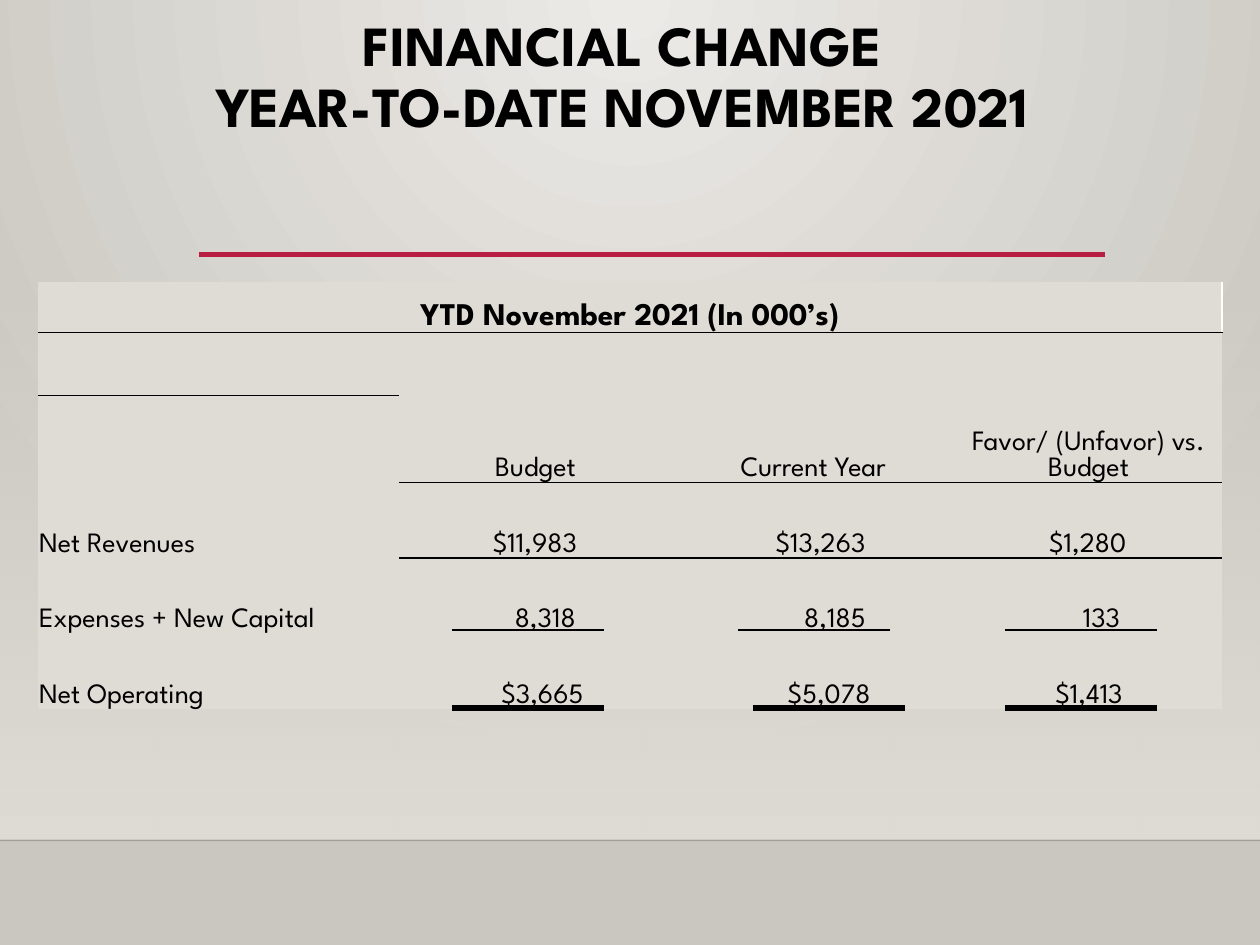
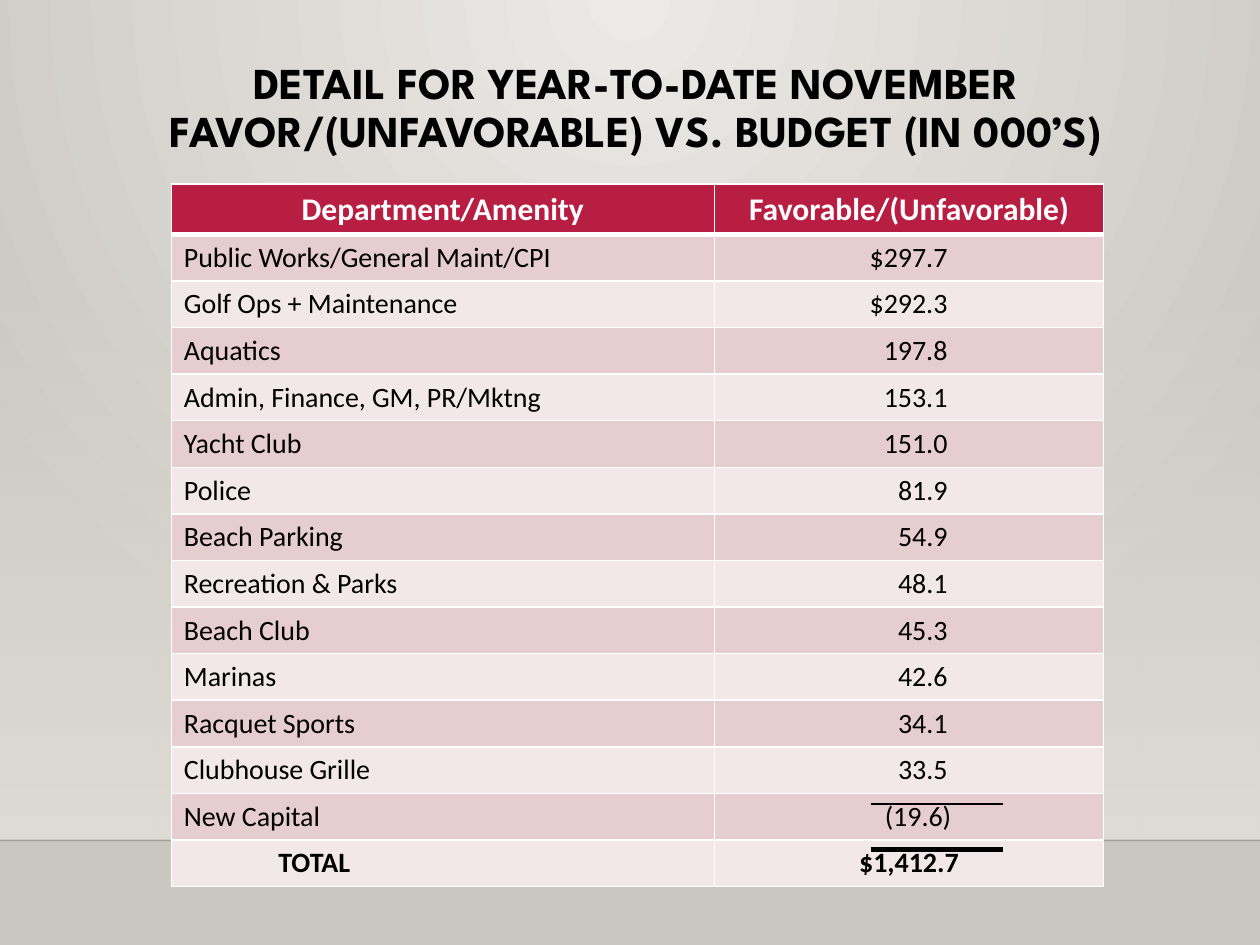
from dataclasses import dataclass

from lxml.etree import SubElement
from pptx import Presentation
from pptx.dml.color import RGBColor
from pptx.enum.shapes import MSO_CONNECTOR, MSO_SHAPE
from pptx.enum.text import MSO_ANCHOR as ANCHOR, PP_ALIGN as ALIGN
from pptx.oxml.ns import qn
from pptx.util import Inches, Pt


@dataclass(frozen=True)
class Theme:
    ink: str = "000000"
    white: str = "FFFFFF"
    accent: str = "B71E42"
    panel: str = "DFDBD5"
    glow: str = "ECEAE7"
    edge: str = "CAC7C1"
    band_dark: str = "E6CDCF"
    band_light: str = "F3E8E9"
    display: str = "League Spartan"
    body: str = "Calibri"
    head_size: float = 18
    text_size: float = 16


T = Theme()
rgb = RGBColor.from_string
W, H = Inches(10), Inches(7.5)
U = W // 1000  # the slide is a grid of 1000 columns by 750 rows
NO_GRID = "{2D5ABB26-0587-4C30-8999-92F81FD0307C}"


def rule(s, x, y, width, colour, points):
    """Draw a horizontal line, measured in grid units."""
    ln = s.shapes.add_connector(MSO_CONNECTOR.STRAIGHT, x * U, y * U, (x + width) * U, y * U)
    ln.line.color.rgb = rgb(colour)
    ln.line.width = Pt(points)
    SubElement(ln.element.spPr, qn("a:effectLst"))
    return ln


def fill_cell(cell, text, fill, font, size, margins, align=ALIGN.LEFT,
              colour=T.ink, bold=False, anchor=ANCHOR.TOP, edges=()):
    """Write and format a cell; edges are (side, colour, points) in the order L, R, T, B."""
    cell.fill.solid()
    cell.fill.fore_color.rgb = rgb(fill)
    cell.vertical_anchor = anchor
    cell.margin_left, cell.margin_top, cell.margin_right, cell.margin_bottom = (m * U for m in margins)
    p = cell.text_frame.paragraphs[0]
    p.text = text
    p.alignment = align
    for r in p.runs:
        r.font.name, r.font.size, r.font.bold = font, Pt(size), bold
        r.font.color.rgb = rgb(colour)
    tcPr = cell._tc.get_or_add_tcPr()
    for i, (side, edge_colour, points) in enumerate(edges):
        ln = SubElement(tcPr, qn(f"a:ln{side}"), w=str(Pt(points)))
        SubElement(SubElement(ln, qn("a:solidFill")), qn("a:srgbClr"), val=edge_colour)
        tcPr.insert(i, ln)


prs = Presentation()
prs.slide_width, prs.slide_height = W, H

# Radial glow from the top centre, shared through the master
master = prs.slide_master
bg = master.background.fill
bg.gradient()
for stop, colour in zip(bg.gradient_stops, (T.glow, T.edge)):
    stop.color.rgb = rgb(colour)
lin = master.element.xpath(".//p:bg//a:lin")[0]
glow = SubElement(lin.getparent(), qn("a:path"), path="circle")
SubElement(glow, qn("a:fillToRect"), l="43000", t="0", r="43000", b="100000")
lin.getparent().remove(lin)

# Wall, horizon and title of each slide
titles = [
    ("FINANCIAL CHANGE\nYEAR-TO-DATE NOVEMBER 2021", 32.4, (84, 9, 820, 113)),
    ("DETAIL FOR YEAR-TO-DATE NOVEMBER\nFAVOR/(UNFAVORABLE) VS. BUDGET (IN 000’S)",
     25.2, (102, 44, 806, 97)),
]
for title, size, box in titles:
    s = prs.slides.add_slide(prs.slide_layouts[6])
    wall = s.shapes.add_shape(MSO_SHAPE.RECTANGLE, 0, 220 * U, W, 446 * U)
    wall.shadow.inherit = False
    wall.line.fill.background()
    wall.fill.gradient()
    wall.fill.gradient_angle = 270
    for stop in wall.fill.gradient_stops:
        stop.color.rgb = rgb(T.panel)
    horizon = rule(s, 0, 667, 1000, T.ink, 1)
    for sp, alpha in ((wall, "0"), (horizon, "20000")):
        SubElement(sp.element.spPr.xpath(".//a:srgbClr")[0], qn("a:alpha"), val=alpha)

    tf = s.shapes.add_textbox(*(n * U for n in box)).text_frame
    tf.word_wrap = True
    tf.text = title
    for p in tf.paragraphs:
        p.alignment = ALIGN.CENTER
        p.line_spacing = 0.9
        for r in p.runs:
            r.font.name, r.font.size, r.font.bold = T.display, Pt(size), True
            r.font.color.rgb = rgb(T.ink)

summary, detail = prs.slides

# Summary: budget against current year
rule(summary, 158, 202, 719, T.accent, 2.5)
col_widths = (287, 216, 225, 212)
row_heights = (40, 50, 34, 35, 60, 60, 60)
headings = ("", "Budget", "Current Year", "Favor/ (Unfavor) vs. Budget")
# Each amount comes with its distance from the right side of the column
amounts = [
    ("Net Revenues", ("$11,983", 75), ("$13,263", 71), ("$1,280", 76)),
    ("Expenses + New Capital", ("8,318", 76), ("8,185", 71), ("133", 81)),
    ("Net Operating", ("$3,665", 70), ("$5,078", 67), ("$1,413", 79)),
]
tbl = summary.shapes.add_table(len(row_heights), len(col_widths), 30 * U, 224 * U,
                               sum(col_widths) * U, sum(row_heights) * U).table
tbl._tbl.tblPr.find(qn("a:tableStyleId")).text = NO_GRID
tbl.first_row = tbl.horz_banding = False
for col, width in zip(tbl.columns, col_widths):
    col.width = width * U
for row, height in zip(tbl.rows, row_heights):
    row.height = height * U

look = dict(fill=T.panel, font=T.display, anchor=ANCHOR.BOTTOM)
tight = (1, 1, 1, 0)
top, bottom, right = ("T", T.ink, 1), ("B", T.ink, 1), ("R", T.white, 1)
for c, heading in enumerate(headings):
    fill_cell(tbl.cell(0, c), "" if c else "YTD November 2021 (In 000’s)", size=T.head_size,
              margins=tight, align=ALIGN.CENTER, bold=True,
              edges=(right, bottom) if c in (0, 3) else (bottom,), **look)
    for r in (1, 2, 3):
        edges = ([top] if r == 1 else []) + ([bottom] if c else [])
        fill_cell(tbl.cell(r, c), heading if r == 1 else "", size=T.text_size,
                  margins=tight, align=ALIGN.CENTER, edges=edges, **look)
    if c:
        tbl.cell(1, c).merge(tbl.cell(3, c))
tbl.cell(0, 0).merge(tbl.cell(0, 3))
for r, (label, *values) in enumerate(amounts, 4):
    fill_cell(tbl.cell(r, 0), label, size=T.text_size, margins=tight, **look)
    for c, (value, gap) in enumerate(values, 1):
        fill_cell(tbl.cell(r, c), value, size=T.text_size, margins=(1, 1, gap, 0),
                  align=ALIGN.RIGHT, edges=(top,) if r == 4 else (), **look)

for subtotal_x, total_x in ((359, 359), (586, 598), (798, 798)):
    rule(summary, subtotal_x, 500, 120, T.ink, 1.25)
    rule(summary, total_x, 562, 120, T.ink, 3)

# Detail: variance by department
departments = [
    ("Public Works/General Maint/CPI", "$297.7"),
    ("Golf Ops + Maintenance", "$292.3"),
    ("Aquatics", "197.8"),
    ("Admin, Finance, GM, PR/Mktng", "153.1"),
    ("Yacht Club", "151.0"),
    ("Police", "81.9"),
    ("Beach Parking", "54.9"),
    ("Recreation & Parks", "48.1"),
    ("Beach Club", "45.3"),
    ("Marinas", "42.6"),
    ("Racquet Sports", "34.1"),
    ("Clubhouse Grille", "33.5"),
    ("New Capital", "(19.6)"),
    ("TOTAL", "$1,412.7"),
]
value_gaps = {"New Capital": 121, "TOTAL": 115}
col_widths = (431, 309)
row_height = 37
tbl = detail.shapes.add_table(len(departments) + 1, 2, 136 * U, 146 * U, sum(col_widths) * U,
                              row_height * (len(departments) + 1) * U).table
for col, width in zip(tbl.columns, col_widths):
    col.width = width * U

grid = [(side, T.white, 1) for side in "LRTB"]
head_grid = grid[:3] + [("B", T.white, 3)]
for c, heading in enumerate(("Department/Amenity", "Favorable/(Unfavorable)")):
    fill_cell(tbl.cell(0, c), heading, T.accent, T.body, T.head_size, (10, 5, 10, 5),
              ALIGN.CENTER, T.white, True, edges=head_grid)
for r, (name, value) in enumerate(departments, 1):
    is_total = name == "TOTAL"
    look = dict(fill=T.band_dark if r % 2 else T.band_light, font=T.body, size=T.text_size,
                bold=is_total, edges=(head_grid[:2] + [("T", T.white, 3), grid[3]]) if r == 1 else grid)
    fill_cell(tbl.cell(r, 0), name, margins=(85 if is_total else 10, 5, 10, 5), **look)
    fill_cell(tbl.cell(r, 1), value, margins=(10, 5, value_gaps.get(name, 124), 5),
              align=ALIGN.RIGHT, **look)

rule(detail, 691, 638, 105, T.ink, 1.25)
rule(detail, 691, 674, 105, T.ink, 3)

prs.save("out.pptx")
